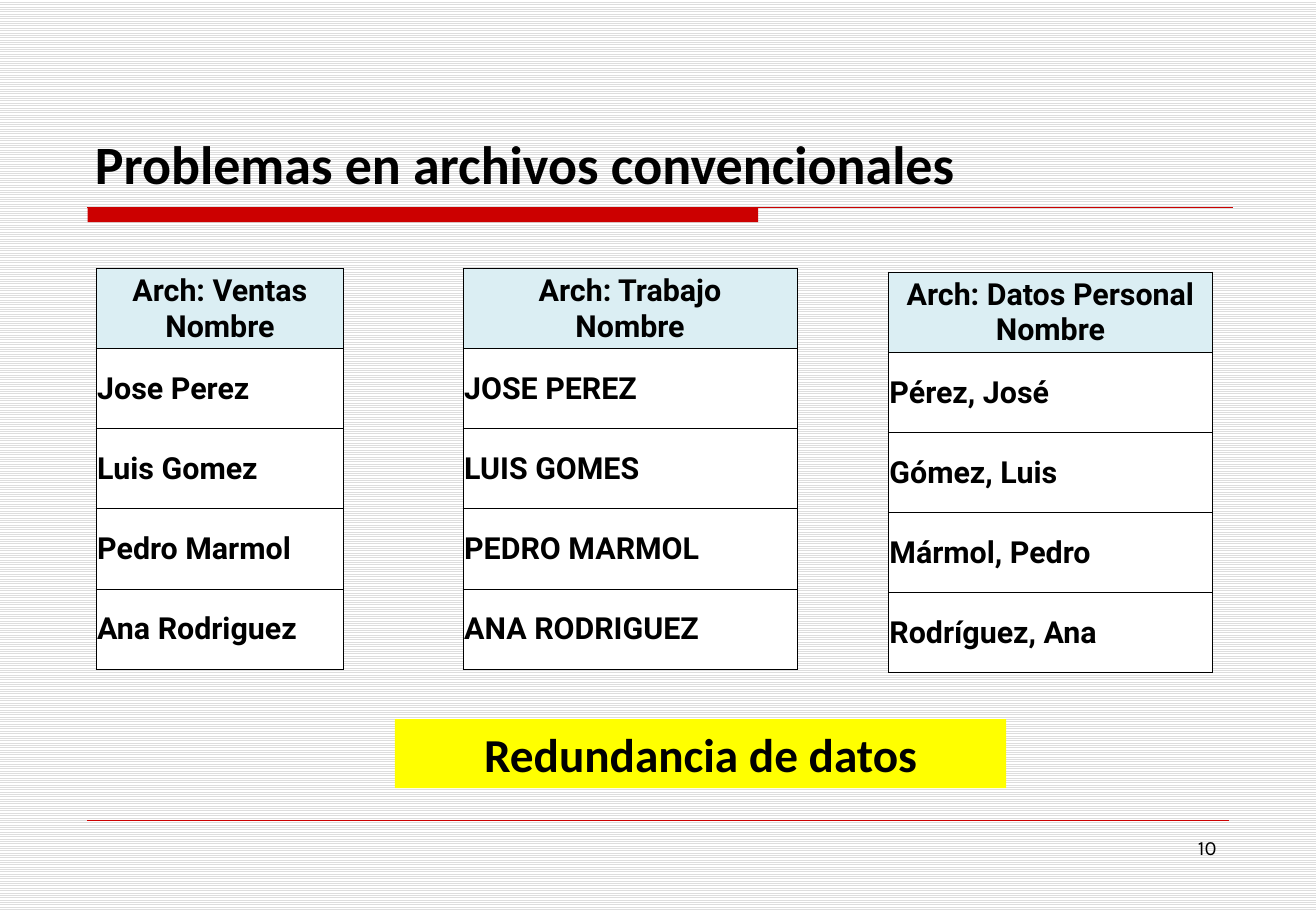
from pptx import Presentation
from pptx.dml.color import RGBColor
from pptx.enum import dml, shapes, text
from pptx.oxml import ns, xmlchemy
from pptx.util import Inches, Pt

BLACK = RGBColor(0x00, 0x00, 0x00)
WHITE = RGBColor(0xFF, 0xFF, 0xFF)
STRIPE = RGBColor(0xDD, 0xDD, 0xDD)
RED = RGBColor(0xCC, 0x00, 0x00)
YELLOW = RGBColor(0xFF, 0xFF, 0x00)
HEADER_BLUE = RGBColor(0xDB, 0xEE, 0xF3)

ROW_HEIGHT = 0.66
LEFT, CENTER, RIGHT = text.PP_ALIGN.LEFT, text.PP_ALIGN.CENTER, text.PP_ALIGN.RIGHT
MIDDLE, BOTTOM = text.MSO_ANCHOR.MIDDLE, text.MSO_ANCHOR.BOTTOM

# left, top, width, header lines, names
FILES = [
    (0.79, 2.21, 2.04, ["Arch: Ventas", "Nombre"],
     ["Jose Perez", "Luis Gomez", "Pedro Marmol", "Ana Rodriguez"]),
    (3.81, 2.21, 2.75, ["Arch: Trabajo", "Nombre"],
     ["JOSE PEREZ", "LUIS GOMES", "PEDRO MARMOL", "ANA RODRIGUEZ"]),
    (7.31, 2.24, 2.67, ["Arch: Datos Personal", "Nombre"],
     ["Pérez, José", "Gómez, Luis", "Mármol, Pedro", "Rodríguez, Ana"]),
]


def write(tf, lines, font="Calibri", size=18, bold=True, align=LEFT):
    """Put one paragraph per line into a text frame."""
    for i, line in enumerate(lines):
        p = tf.paragraphs[0] if i == 0 else tf.add_paragraph()
        p.alignment = align
        r = p.add_run()
        r.text = line
        r.font.name, r.font.size, r.font.bold = font, Pt(size), bold
        r.font.color.rgb = BLACK


def add_block(s, left, top, width, height, color):
    sp = s.shapes.add_shape(shapes.MSO_SHAPE.RECTANGLE, Inches(left), Inches(top),
                            Inches(width), Inches(height))
    sp.shadow.inherit = False
    sp.fill.solid()
    sp.fill.fore_color.rgb = color
    sp.line.fill.background()
    return sp


def add_rule(s, x1, x2, y, weight):
    line = s.shapes.add_connector(shapes.MSO_CONNECTOR.STRAIGHT, Inches(x1), Inches(y),
                                  Inches(x2), Inches(y))
    line.line.color.rgb = RED
    line.line.width = Pt(weight)
    line._element.spPr.append(xmlchemy.OxmlElement("a:effectLst"))


def add_borders(cell):
    tcPr = cell._tc.get_or_add_tcPr()
    for i, side in enumerate(("lnL", "lnR", "lnT", "lnB")):
        ln = xmlchemy.OxmlElement(f"a:{side}")
        ln.set("w", str(Pt(0.5)))
        fill = xmlchemy.OxmlElement("a:solidFill")
        color = xmlchemy.OxmlElement("a:srgbClr")
        color.set("val", str(BLACK))
        fill.append(color)
        ln.append(fill)
        tcPr.insert(i, ln)


def add_file_table(s, left, top, width, header, names):
    rows = [header] + [[name] for name in names]
    frame = s.shapes.add_table(len(rows), 1, Inches(left), Inches(top),
                               Inches(width), Inches(ROW_HEIGHT * len(rows)))
    table = frame.table
    table.horz_banding = False
    for i, lines in enumerate(rows):
        cell = table.cell(i, 0)
        cell.fill.solid()
        cell.fill.fore_color.rgb = WHITE if i else HEADER_BLUE
        cell.margin_left = cell.margin_right = cell.margin_top = Inches(0.01)
        cell.margin_bottom = 0
        cell.vertical_anchor = MIDDLE
        write(cell.text_frame, lines, font="Roboto", align=LEFT if i else CENTER)
        add_borders(cell)


def add_title(s, title):
    sp = s.shapes.title
    sp.left, sp.top, sp.width, sp.height = map(Inches, (0.68, 0.33, 9.48, 1.33))
    tf = sp.text_frame
    tf.auto_size = text.MSO_AUTO_SIZE.NONE
    tf.vertical_anchor = BOTTOM
    write(tf, [title], size=32)


def add_page_number(s, number):
    sp = s.shapes.add_textbox(Inches(7.76), Inches(6.83), Inches(2.35), Inches(0.52))
    sp.text_frame.word_wrap = True
    write(sp.text_frame, [number], font="Karla", size=12, bold=False, align=RIGHT)


def main():
    prs = Presentation()
    prs.slide_width, prs.slide_height = Inches(10.83), Inches(7.5)
    s = prs.slides.add_slide(prs.slide_layouts[5])

    bg = s.background.fill
    bg.patterned()
    bg.pattern = dml.MSO_PATTERN.LIGHT_HORIZONTAL
    bg.fore_color.rgb = STRIPE
    bg.back_color.rgb = WHITE

    add_block(s, 0.72, 1.71, 5.52, 0.12, RED)
    add_rule(s, 0.72, 10.15, 1.71, 0.75)
    add_rule(s, 0.72, 10.11, 6.75, 0.25)
    add_title(s, "Problemas en archivos convencionales")
    add_page_number(s, "10")

    banner = add_block(s, 3.25, 5.92, 5.03, 0.57, YELLOW)
    banner.text_frame.vertical_anchor = MIDDLE
    write(banner.text_frame, ["Redundancia de datos"], size=28, align=CENTER)

    for file in FILES:
        add_file_table(s, *file)
    prs.save("out.pptx")


if __name__ == "__main__":
    main()
